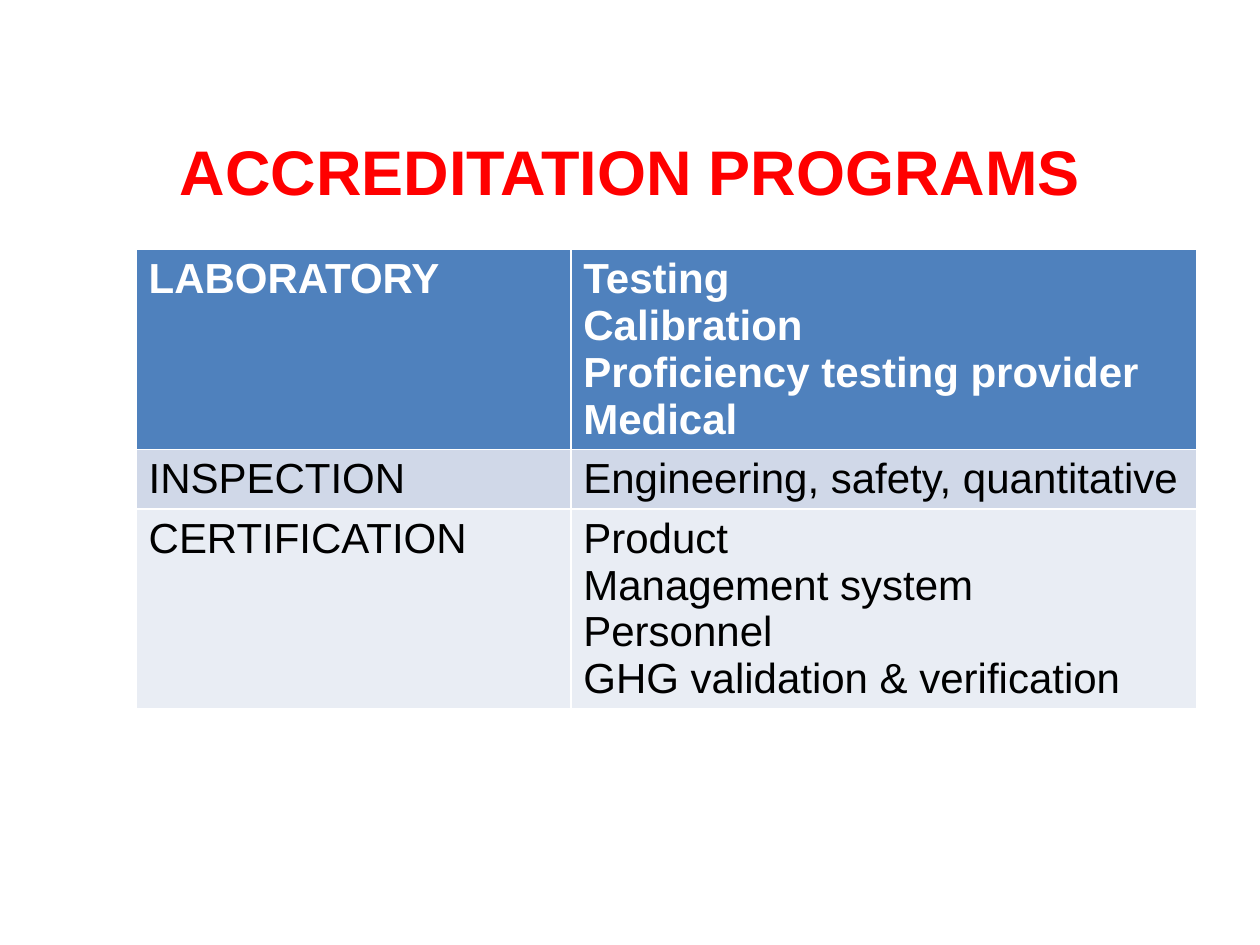
from pptx import Presentation
from pptx.dml.color import RGBColor
from pptx.enum.text import MSO_ANCHOR, MSO_AUTO_SIZE, PP_ALIGN
from pptx.util import Inches, Pt

CENTER = PP_ALIGN.CENTER
MIDDLE = MSO_ANCHOR.MIDDLE
NO_FIT = MSO_AUTO_SIZE.NONE

RED = RGBColor(0xFF, 0x00, 0x00)
WHITE = RGBColor(0xFF, 0xFF, 0xFF)
BLACK = RGBColor(0x00, 0x00, 0x00)
BLUE = RGBColor(0x4F, 0x81, 0xBD)
PALE = RGBColor(0xD0, 0xD8, 0xE8)
LIGHT = RGBColor(0xE9, 0xED, 0xF4)

FONT = "Arial"
WIDTHS = (3.45, 4.97)
HEIGHT = 0.41
ROWS = [
    ("LABORATORY",
     ["Testing", "Calibration", "Proficiency testing provider", "Medical"]),
    ("INSPECTION", ["Engineering, safety, quantitative"]),
    ("CERTIFICATION",
     ["Product", "Management system", "Personnel",
      "GHG validation & verification"]),
]
STYLES = [(BLUE, WHITE, True), (PALE, BLACK, False), (LIGHT, BLACK, False)]


def add_run(para, text, size, color, bold):
    run = para.add_run()
    run.text = text
    font = run.font
    font.name = FONT
    font.size = Pt(size)
    font.bold = bold
    font.color.rgb = color


def set_title(slide, text):
    title = slide.shapes.title
    title.left, title.top = Inches(0.5), Inches(0.67)
    title.width, title.height = Inches(9), Inches(1.25)
    frame = title.text_frame
    frame.word_wrap = True
    frame.auto_size = NO_FIT
    frame.vertical_anchor = MIDDLE
    frame.margin_top = Inches(0.16)
    para = frame.paragraphs[0]
    para.alignment = CENTER
    add_run(para, text, 36, RED, True)


def fill_cell(cell, lines, style):
    fill, color, bold = style
    cell.fill.solid()
    cell.fill.fore_color.rgb = fill
    frame = cell.text_frame
    for i, line in enumerate(lines):
        para = frame.add_paragraph() if i else frame.paragraphs[0]
        add_run(para, line, 24, color, bold)


def add_grid(slide):
    table = slide.shapes.add_table(
        len(ROWS), len(WIDTHS), Inches(1.08), Inches(1.98),
        Inches(sum(WIDTHS)), Inches(HEIGHT * len(ROWS))).table
    for col, width in zip(table.columns, WIDTHS):
        col.width = Inches(width)
    for row, (name, items), style in zip(table.rows, ROWS, STYLES):
        row.height = Inches(HEIGHT)
        fill_cell(row.cells[0], [name], style)
        fill_cell(row.cells[1], items, style)


def main():
    deck = Presentation()
    deck.slide_width, deck.slide_height = Inches(10), Inches(7.5)
    slide = deck.slides.add_slide(deck.slide_layouts[5])
    set_title(slide, "ACCREDITATION PROGRAMS")
    add_grid(slide)
    deck.save("out.pptx")


if __name__ == "__main__":
    main()
